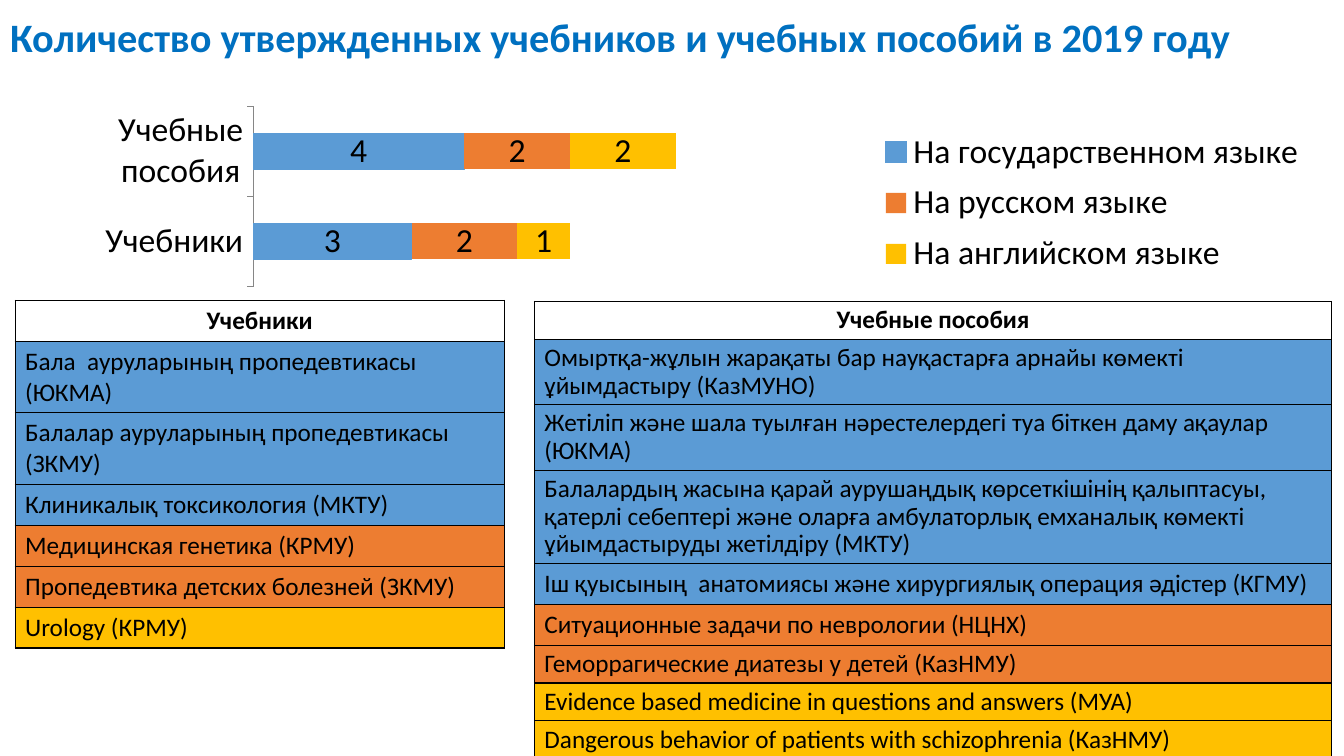
from lxml import etree
from pptx import Presentation
from pptx.chart.data import CategoryChartData
from pptx.dml.color import RGBColor
from pptx.enum.chart import XL_CHART_TYPE, XL_LEGEND_POSITION, XL_TICK_MARK
from pptx.enum.text import MSO_ANCHOR, PP_ALIGN
from pptx.oxml.ns import qn
from pptx.util import Inches, Pt

BAR_STACKED = XL_CHART_TYPE.BAR_STACKED
LEGEND_RIGHT = XL_LEGEND_POSITION.RIGHT
TICK_NONE, TICK_OUT = XL_TICK_MARK.NONE, XL_TICK_MARK.OUTSIDE
MIDDLE = MSO_ANCHOR.MIDDLE
LEFT, CENTER = PP_ALIGN.LEFT, PP_ALIGN.CENTER

FONT = "Calibri"
COLORS = {
    "title": "0070C0",
    "text": "000000",
    "axis": "868686",
    "state": "5B9BD5",
    "russian": "ED7D31",
    "english": "FFC000",
}
LINE_HEIGHT = 0.305  # one line of 18 pt text, in inches
CELL_PADDING = 0.1   # top and bottom margins together

CATEGORIES = ["Учебники", "Учебные пособия"]
SERIES = [
    ("На государственном языке", "state", (3, 4)),
    ("На русском языке", "russian", (2, 2)),
    ("На английском языке", "english", (1, 2)),
]

# Table rows: text, language, number of lines, line spacing
TEXTBOOKS = [
    ("Учебники", None, 1, 1),
    ("Бала  ауруларының пропедевтикасы (ЮКМА)", "state", 2, 1),
    ("Балалар ауруларының пропедевтикасы (ЗКМУ)", "state", 2, 1),
    ("Клиникалық токсикология (МКТУ)", "state", 1, 1),
    ("Медицинская генетика (КРМУ)", "russian", 1, 1),
    ("Пропедевтика детских болезней (ЗКМУ)", "russian", 1, 1),
    ("Urology (КРМУ)", "english", 1, 1),
]
MANUALS = [
    ("Учебные пособия", None, 1, 0.9),
    ("Омыртқа-жұлын жарақаты бар науқастарға арнайы көмекті "
     "ұйымдастыру (КазМУНО)", "state", 2, 0.9),
    ("Жетіліп және шала туылған нәрестелердегі туа біткен даму ақаулар "
     "(ЮКМА)", "state", 2, 0.9),
    ("Балалардың жасына қарай аурушаңдық көрсеткішінің қалыптасуы, "
     "қатерлі себептері және оларға амбулаторлық емханалық көмекті "
     "ұйымдастыруды жетілдіру (МКТУ)", "state", 3, 0.9),
    ("Іш қуысының  анатомиясы және хирургиялық операция әдістер (КГМУ)",
     "state", 1, 1),
    ("Ситуационные задачи по неврологии (НЦНХ)", "russian", 1, 1),
    ("Геморрагические диатезы у детей (КазНМУ)", "russian", 1, 0.9),
    ("Evidence based medicine in questions and answers (МУА)",
     "english", 1, 0.9),
    ("Dangerous behavior of patients with schizophrenia (КазНМУ)",
     "english", 1, 0.9),
]


def rgb(name):
    return RGBColor.from_string(COLORS[name])


def set_attrs(obj, values):
    for name, value in values.items():
        setattr(obj, name, value)


def format_font(font, size, color="text", bold=False):
    set_attrs(font, {"name": FONT, "size": Pt(size), "bold": bold})
    font.color.rgb = rgb(color)


def write_text(tf, text, size, color="text", bold=False, **paragraph):
    p = tf.paragraphs[0]
    set_attrs(p, paragraph)
    r = p.add_run()
    r.text = text
    format_font(r.font, size, color, bold)


def add_title(s, text):
    sp = s.shapes.title
    set_attrs(sp, {"left": 0, "top": 0,
                   "width": Inches(13.33), "height": Inches(0.79)})
    set_attrs(sp.text_frame, {"vertical_anchor": MIDDLE, "word_wrap": True})
    write_text(sp.text_frame, text, 28.8, "title", True,
               alignment=LEFT, line_spacing=0.9)


def set_layout(parent, index, x, y, w, h, inner=False):
    """Place a chart part by fractions of the chart's size."""
    for old in parent.findall(qn("c:layout")):
        parent.remove(old)
    layout = etree.Element(qn("c:layout"))
    parent.insert(index, layout)
    manual = etree.SubElement(layout, qn("c:manualLayout"))
    values = {"xMode": "edge", "yMode": "edge", "x": x, "y": y, "w": w, "h": h}
    if inner:
        values = {"layoutTarget": "inner", **values}
    for tag, value in values.items():
        etree.SubElement(manual, qn(f"c:{tag}")).set("val", str(value))


def add_language_chart(s):
    data = CategoryChartData()
    data.categories = CATEGORIES
    for name, _, values in SERIES:
        data.add_series(name, values)
    chart = s.shapes.add_chart(BAR_STACKED, Inches(0.27), Inches(0.97),
                               Inches(12.88), Inches(1.97), data).chart
    chart.has_title = False
    format_font(chart.font, 24)

    # Bars and value labels
    plot = chart.plots[0]
    set_attrs(plot, {"gap_width": 150, "overlap": 100,
                     "vary_by_categories": False, "has_data_labels": True})
    plot.data_labels.show_value = True
    format_font(plot.data_labels.font, 24)
    for series, (_, color, _) in zip(plot.series, SERIES):
        series.format.fill.solid()
        series.format.fill.fore_color.rgb = rgb(color)
    state_line = plot.series[0].format.line
    state_line.color.rgb = rgb("state")
    state_line.width = Pt(0.75)

    # Axes
    set_attrs(chart.value_axis, {"visible": False, "minimum_scale": 0,
                                 "maximum_scale": 9,
                                 "has_major_gridlines": False})
    set_attrs(chart.category_axis, {"major_tick_mark": TICK_OUT,
                                    "minor_tick_mark": TICK_NONE,
                                    "has_major_gridlines": False})
    chart.category_axis.format.line.color.rgb = rgb("axis")

    # Legend and plot placement
    chart.has_legend = True
    set_attrs(chart.legend, {"position": LEGEND_RIGHT,
                             "include_in_layout": False})
    format_font(chart.legend.font, 24)
    set_layout(chart.legend._element, 1, 0.65, 0.12, 0.34, 0.82)
    plot_area = chart._chartSpace.find(f".//{qn('c:plotArea')}")
    set_layout(plot_area, 0, 0.174, 0.043, 0.366, 0.908, inner=True)


def add_borders(cell):
    tc_pr = cell._tc.get_or_add_tcPr()
    for side in ("lnL", "lnR", "lnT", "lnB"):
        ln = etree.SubElement(tc_pr, qn(f"a:{side}"), w=str(Pt(1)))
        fill = etree.SubElement(ln, qn("a:solidFill"))
        etree.SubElement(fill, qn("a:srgbClr"), val=COLORS["text"])


def add_book_table(s, left, top, width, rows):
    table = s.shapes.add_table(len(rows), 1, Inches(left), Inches(top),
                               Inches(width), Inches(0.4 * len(rows))).table
    set_attrs(table, {"first_row": False, "horz_banding": False})
    for i, (text, language, lines, spacing) in enumerate(rows):
        height = CELL_PADDING + lines * LINE_HEIGHT * spacing
        table.rows[i].height = Inches(height)
        cell = table.cell(i, 0)
        add_borders(cell)
        if language:
            cell.fill.solid()
            cell.fill.fore_color.rgb = rgb(language)
        else:
            cell.fill.background()
        write_text(cell.text_frame, text, 18, bold=language is None,
                   alignment=LEFT if language else CENTER,
                   line_spacing=float(spacing))


def main():
    prs = Presentation()
    set_attrs(prs, {"slide_width": Inches(13.33),
                    "slide_height": Inches(7.5)})
    s = prs.slides.add_slide(prs.slide_layouts[5])
    add_title(s, "Количество утвержденных учебников и учебных пособий "
                 "в 2019 году")
    add_language_chart(s)
    add_book_table(s, 0.15, 2.98, 4.85, TEXTBOOKS)
    add_book_table(s, 5.3, 2.99, 7.91, MANUALS)
    prs.save("out.pptx")


if __name__ == "__main__":
    main()
